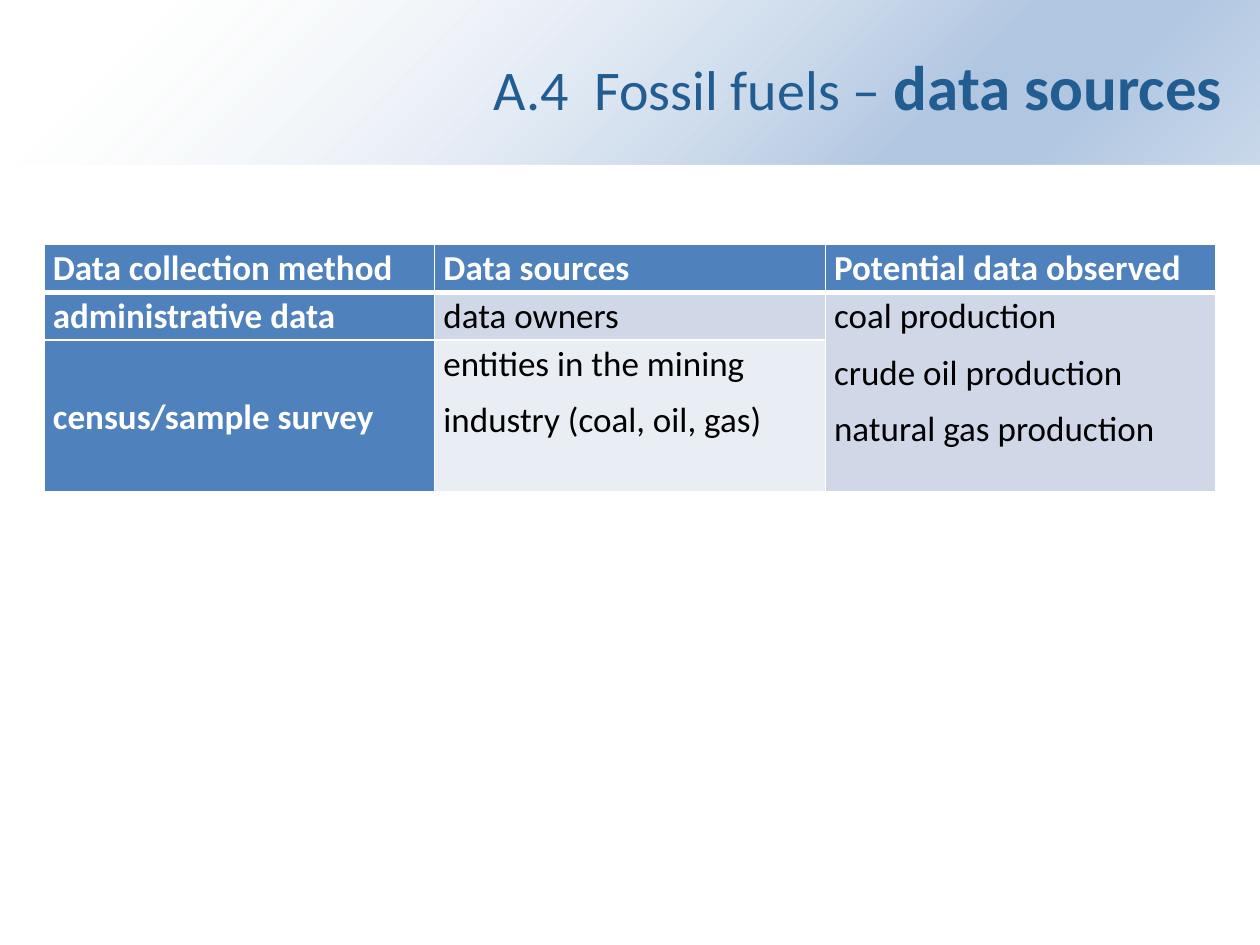
from dataclasses import dataclass, field
from typing import Any

from lxml import etree
from pptx import Presentation
from pptx.dml.color import RGBColor
from pptx.enum import shapes, text
from pptx.oxml import ns
from pptx.util import Inches, Pt

COLORS = {
    "white": "FFFFFF", "black": "000000", "title": "225D92",
    "header": "4F81BD", "band_dark": "D0D8E8", "band_light": "E9EDF4",
    "sky": "B0C6E1", "mist": "CAD9EB",
}
BANNER_STOPS = [(11, "white", 30), (74, "sky", 100), (83, "sky", 100), (100, "mist", 100)]
HEADINGS = ["Data collection method", "Data sources", "Potential data observed"]
METHODS = ["administrative data", "census/sample survey"]
SOURCES = [["data owners"], ["entities in the mining", "industry (coal, oil, gas)"]]
OBSERVED = ["coal production", "crude oil production", "natural gas production"]


def add_child(parent, tag, **attributes):
    child = etree.SubElement(parent, ns.qn(tag))
    for name, value in attributes.items():
        child.set(name, str(value))
    return child


def add_color(parent, color, opacity=100):
    fill = add_child(parent, "a:solidFill") if parent.tag != ns.qn("a:gs") else parent
    node = add_child(fill, "a:srgbClr", val=COLORS[color])
    if opacity < 100:
        add_child(node, "a:alpha", val=opacity * 1000)


def add_span(para, words, size=20, color="black", bold=False, font="Calibri"):
    span = para.add_run()
    span.text = words
    span.font.name = font
    span.font.size = Pt(size)
    span.font.bold = bold
    span.font.color.rgb = RGBColor.from_string(COLORS[color])


@dataclass
class SlideBuilder:
    page: Any
    inset: float = 0.07
    line_spacing: float = 1.07
    gap: int = 3
    border: dict = field(default_factory=lambda: {"a:lnL": 1, "a:lnR": 1, "a:lnT": 1, "a:lnB": 1})

    def banner(self, width, height):
        """Add a band across the top, shaded from its top left corner."""
        box = self.page.shapes.add_shape(
            shapes.MSO_SHAPE.RECTANGLE, 0, 0, Inches(width), Inches(height))
        box.shadow.inherit = False
        box.line.fill.background()
        box.fill.gradient()
        gradient = box._element.spPr.find(ns.qn("a:gradFill"))
        for child in list(gradient):
            gradient.remove(child)
        stops = add_child(gradient, "a:gsLst")
        for position, color, opacity in BANNER_STOPS:
            add_color(add_child(stops, "a:gs", pos=position * 1000), color, opacity)
        shade = add_child(gradient, "a:path", path="circle")
        add_child(shade, "a:fillToRect", r=100000, b=100000)
        tree = self.page.shapes._spTree
        tree.remove(box._element)
        tree.insert(2, box._element)

    def title(self, left, top, width, height, spans):
        box = self.page.shapes.title
        box.left, box.top = Inches(left), Inches(top)
        box.width, box.height = Inches(width), Inches(height)
        box.text_frame.word_wrap = True
        box.text_frame.vertical_anchor = text.MSO_ANCHOR.MIDDLE
        para = box.text_frame.paragraphs[0]
        para.alignment = text.PP_ALIGN.RIGHT
        for words, options in spans:
            add_span(para, words, color="title", **options)

    def table(self, left, top, column_width, row_heights, columns):
        frame = self.page.shapes.add_table(
            len(row_heights), columns, Inches(left), Inches(top),
            Inches(column_width * columns), Inches(sum(row_heights)))
        grid = frame.table
        grid.horz_banding = False
        for column in grid.columns:
            column.width = Inches(column_width)
        for row, height in zip(grid.rows, row_heights):
            row.height = Inches(height)
        return grid

    def cell(self, cell, lines, fill, bottom=1, anchor=text.MSO_ANCHOR.TOP, **style):
        cell.margin_left = cell.margin_right = Inches(self.inset)
        cell.margin_top = cell.margin_bottom = 0
        cell.vertical_anchor = anchor
        for index, line in enumerate(lines):
            frame = cell.text_frame
            para = frame.add_paragraph() if index else frame.paragraphs[0]
            para.line_spacing = self.line_spacing
            para.space_before = Pt(self.gap if index else 0)
            para.space_after = Pt(self.gap)
            add_span(para, line, **style)
        properties = cell._tc.get_or_add_tcPr()
        for side, width in {**self.border, "a:lnB": bottom}.items():
            add_color(add_child(properties, side, w=Pt(width)), "white")
        cell.fill.solid()
        cell.fill.fore_color.rgb = RGBColor.from_string(COLORS[fill])


def main():
    deck = Presentation()
    deck.slide_width, deck.slide_height = Inches(10), Inches(7.5)
    builder = SlideBuilder(deck.slides.add_slide(deck.slide_layouts[5]))

    builder.banner(10, 1.31)
    builder.title(3.03, 0.05, 6.77, 1.25, [
        ("A.4  Fossil fuels – ", {"size": 32}),
        ("data sources", {"size": 36, "bold": True}),
    ])

    grid = builder.table(0.35, 1.94, 3.1, [0.38, 0.38, 1.2], len(HEADINGS))
    label = {"fill": "header", "color": "white", "bold": True}
    for column, heading in enumerate(HEADINGS):
        builder.cell(grid.cell(0, column), [heading], bottom=3, **label)
    anchors = [text.MSO_ANCHOR.TOP, text.MSO_ANCHOR.MIDDLE]
    bands = ["band_dark", "band_light"]
    for row, (method, lines, anchor, band) in enumerate(zip(METHODS, SOURCES, anchors, bands), 1):
        builder.cell(grid.cell(row, 0), [method], anchor=anchor, **label)
        builder.cell(grid.cell(row, 1), lines, band)
    grid.cell(1, 2).merge(grid.cell(2, 2))
    builder.cell(grid.cell(1, 2), OBSERVED, "band_dark")

    deck.save("out.pptx")


if __name__ == "__main__":
    main()
